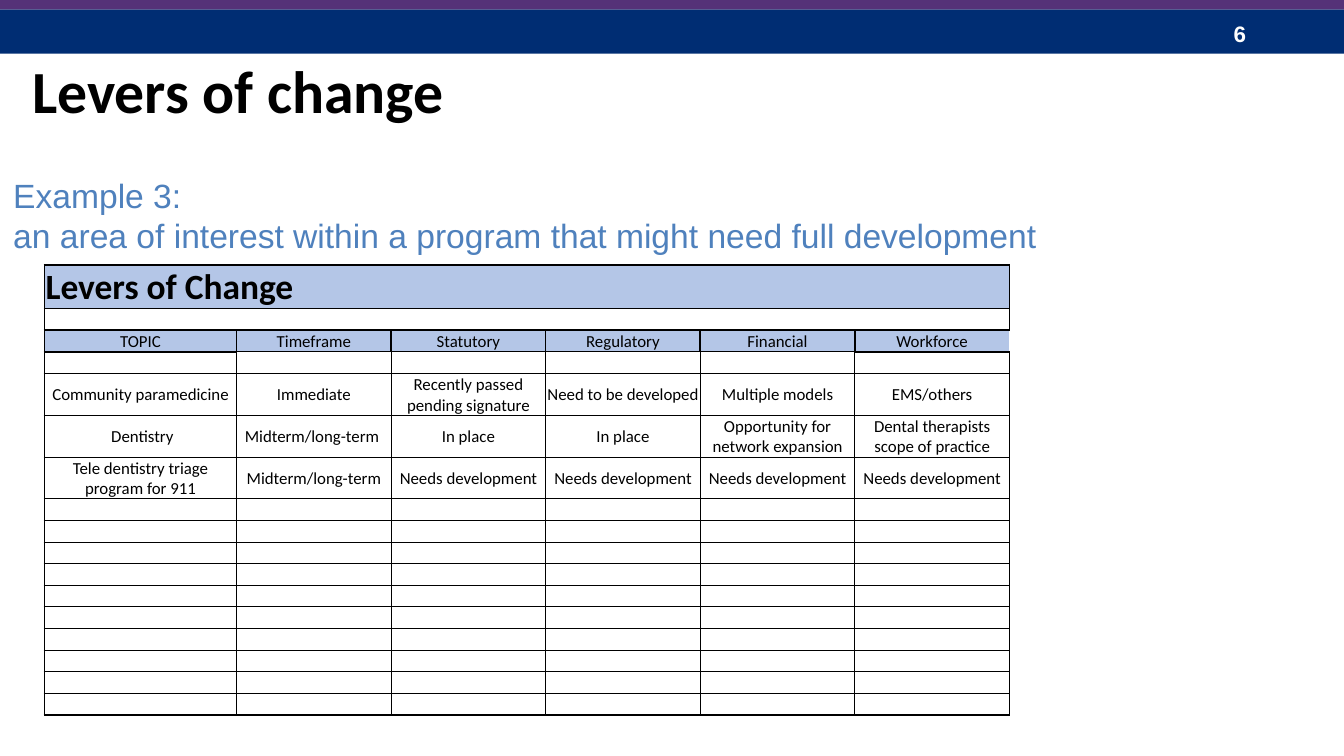
from dataclasses import dataclass

import pptx
import pptx.dml.color
import pptx.enum.shapes
import pptx.enum.text
import pptx.oxml
import pptx.oxml.ns
import pptx.util
from lxml import etree

Inches = pptx.util.Inches
Pt = pptx.util.Pt
ALIGN = pptx.enum.text.PP_ALIGN
ANCHOR = pptx.enum.text.MSO_ANCHOR


@dataclass(frozen=True)
class Theme:
    navy: str = "002D73"
    purple: str = "553278"
    blue: str = "4F81BD"
    header: str = "B4C6E7"
    black: str = "000000"
    white: str = "FFFFFF"
    body_font: str = "Arial"
    table_font: str = "Calibri"
    title: int = 32
    subtitle: int = 18
    number: int = 12
    table_title: int = 19
    cell: int = 9
    thick: float = 1
    thin: float = 0.5


THEME = Theme()

COLUMNS = ["TOPIC", "Timeframe", "Statutory", "Regulatory", "Financial", "Workforce"]
TOPICS = [
    ["Community paramedicine", "Immediate", "Recently passed pending signature",
     "Need to be developed", "Multiple models", "EMS/others"],
    [" Dentistry", "Midterm/long-term ", "In place", "In place",
     "Opportunity for network expansion", "Dental therapists scope of practice"],
    ["Tele dentistry triage program for 911", "Midterm/long-term"]
    + ["Needs development"] * 4,
]
EMPTY = [""] * len(COLUMNS)
ROWS = [["Levers of Change"] + EMPTY[1:], EMPTY, COLUMNS, EMPTY] + TOPICS + [EMPTY] * 10
TITLE_ROW, GAP_ROW, HEADER_ROW = range(3)
FIRST_TOPIC = 4


def rgb(value):
    return pptx.dml.color.RGBColor.from_string(value)


def add_run(p, text, size, font, color, bold=False):
    r = p.add_run()
    r.text = text
    r.font.size = Pt(size)
    r.font.name = font
    r.font.bold = bold
    r.font.color.rgb = rgb(color)


def add_band(s, top, height, color):
    band = s.shapes.add_shape(pptx.enum.shapes.MSO_SHAPE.RECTANGLE,
                              Inches(0), Inches(top), Inches(10), Inches(height))
    band.shadow.inherit = False
    band.fill.solid()
    band.fill.fore_color.rgb = rgb(color)
    band.line.fill.background()


def add_text(s, box, lines, size, font, color, bold=False, anchor=ANCHOR.TOP):
    tf = s.shapes.add_textbox(*[Inches(v) for v in box]).text_frame
    tf.word_wrap = True
    tf.vertical_anchor = anchor
    for i, line in enumerate(lines):
        p = tf.paragraphs[0] if i == 0 else tf.add_paragraph()
        add_run(p, line, size, font, color, bold)


def border_widths(row, col):
    first, last = col == 0, col == len(COLUMNS) - 1
    top = bottom = left = right = THEME.thin
    if row <= HEADER_ROW:
        top = bottom = THEME.thick
        left = right = THEME.thick if row == HEADER_ROW else 0
    if row == HEADER_ROW and not (first or last):
        bottom = THEME.thin
    if row == HEADER_ROW + 1 and (first or last):
        top = THEME.thick
    if row == len(ROWS) - 1:
        bottom = THEME.thick
    if first:
        left = THEME.thick
    if last:
        right = 0 if row == HEADER_ROW else THEME.thick
    return {"lnL": left, "lnR": right, "lnT": top, "lnB": bottom}


def set_borders(cell, widths):
    tc_pr = cell._tc.get_or_add_tcPr()
    qn = pptx.oxml.ns.qn
    for i, (tag, width) in enumerate(widths.items()):
        ln = etree.Element(qn("a:" + tag), w=str(int(Pt(width))))
        if width:
            fill = etree.SubElement(ln, qn("a:solidFill"))
            etree.SubElement(fill, qn("a:srgbClr"), val=THEME.black)
        else:
            etree.SubElement(ln, qn("a:noFill"))
        tc_pr.insert(i, ln)


def fill_cell(cell, row, col, text):
    cell.margin_left = cell.margin_right = cell.margin_top = Inches(0.01)
    cell.margin_bottom = Inches(0)
    cell.vertical_anchor = ANCHOR.MIDDLE if row >= FIRST_TOPIC else ANCHOR.BOTTOM
    if row in (TITLE_ROW, HEADER_ROW):
        cell.fill.solid()
        cell.fill.fore_color.rgb = rgb(THEME.header)
    else:
        cell.fill.background()
    p = cell.text_frame.paragraphs[0]
    is_title = row == TITLE_ROW
    p.alignment = ALIGN.LEFT if is_title else ALIGN.CENTER
    if text:
        add_run(p, text, THEME.table_title if is_title else THEME.cell,
                THEME.table_font, THEME.black, is_title)
    else:
        etree.SubElement(p._p, pptx.oxml.ns.qn("a:endParaRPr"), sz=str(THEME.cell * 100))
    set_borders(cell, border_widths(row, col))


def add_levers_table(s):
    frame = s.shapes.add_table(len(ROWS), len(COLUMNS), Inches(0.33), Inches(1.97),
                               Inches(7.19), Inches(3.3))
    table = frame.table
    table.first_row = False
    table.horz_banding = False
    for col, column in enumerate(table.columns):
        column.width = Inches(1.43 if col == 0 else 1.15)
    for row, texts in enumerate(ROWS):
        tall = row == TITLE_ROW or texts in TOPICS
        table.rows[row].height = Inches(0.3 if tall else 0.15)
        for col, text in enumerate(texts):
            fill_cell(table.cell(row, col), row, col, text)
    table.cell(TITLE_ROW, 0).merge(table.cell(TITLE_ROW, 1))


def main():
    prs = pptx.Presentation()
    prs.slide_width = Inches(10)
    prs.slide_height = Inches(10 * 9 / 16)
    s = prs.slides.add_slide(prs.slide_layouts[6])
    add_band(s, 0.07, 0.33, THEME.navy)
    add_text(s, (9.08, 0.1, 0.75, 0.3), ["6"], THEME.number, THEME.body_font,
             THEME.white, bold=True, anchor=ANCHOR.MIDDLE)
    add_band(s, -0.02, 0.09, THEME.purple)
    add_text(s, (0.14, 0.35, 5.74, 0.64), ["Levers of change"], THEME.title,
             THEME.table_font, THEME.black, bold=True)
    add_text(s, (0, 1.25, 9.38, 0.91),
             ["Example 3:",
              "an area of interest within a program that might need full development"],
             THEME.subtitle, THEME.body_font, THEME.blue)
    add_levers_table(s)
    prs.save("out.pptx")


if __name__ == "__main__":
    main()
